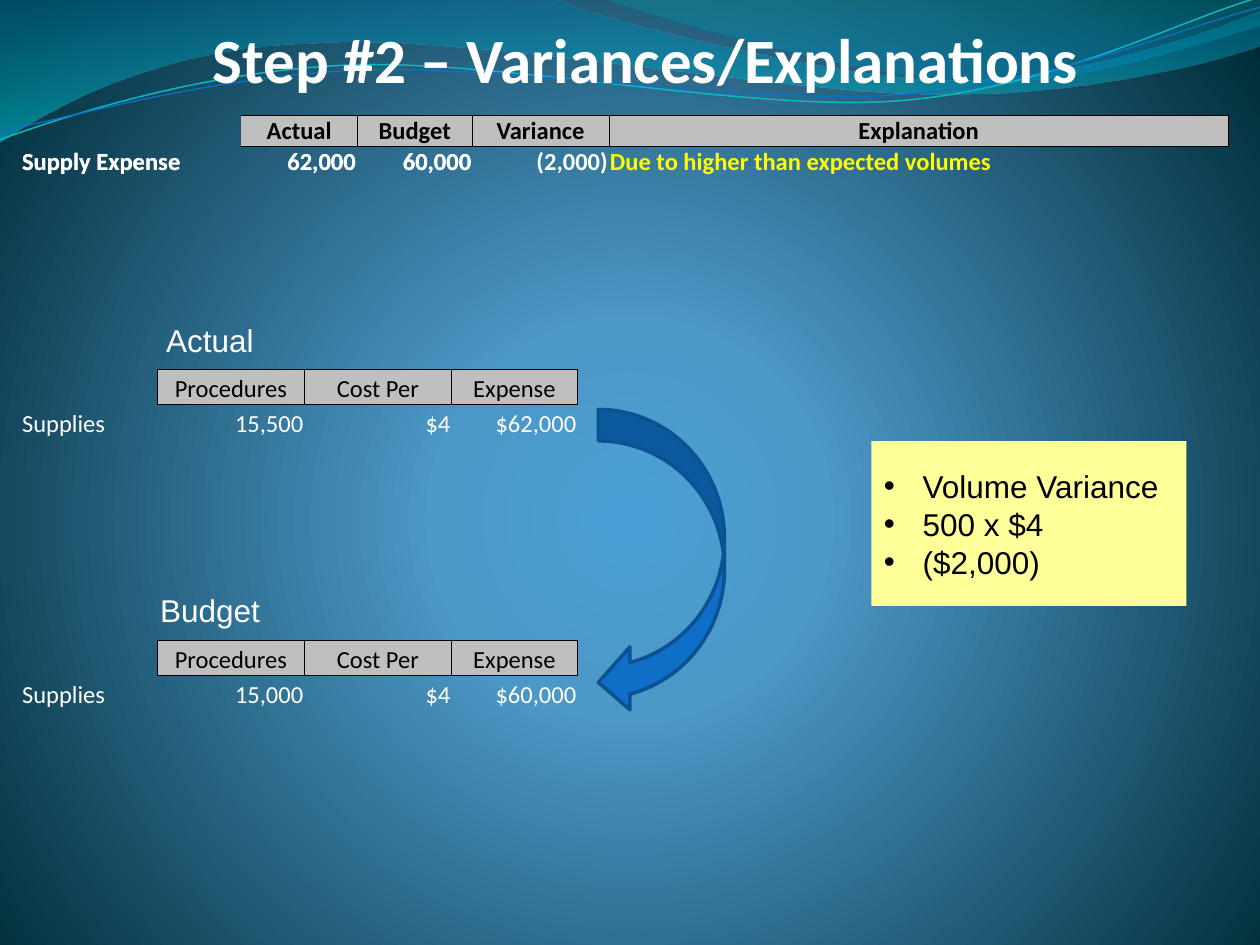
from lxml.etree import SubElement
from pptx import Presentation
from pptx.dml.color import RGBColor
from pptx.enum.shapes import MSO_SHAPE
from pptx.enum.text import MSO_ANCHOR, MSO_AUTO_SIZE, PP_ALIGN
from pptx.oxml import parse_xml
from pptx.oxml.ns import nsdecls, qn
from pptx.util import Pt

PX = 7620
COLORS = {
    "white": "FFFFFF", "black": "000000", "yellow": "FFFF00", "header": "BFBFBF",
    "note": "FFFF99", "arrow": "0F6FC6", "arrow_edge": "0B5292", "aqua": "0AB8BF",
    "glow": "4AA0D6", "mid": "4C98C7", "deep": "002C38",
    "wave_blue": "0074A1", "wave_aqua": "00C6CF", "wave_teal": "00A1A9", "wave_sky": "008BBF",
}


def rgb(name):
    """Return the named colour."""
    return RGBColor.from_string(COLORS[name])


def px(*lengths):
    """Turn px lengths into EMU."""
    return [length * PX for length in lengths]


def gradient(stops, direction):
    """Return a gradient fill from (position, colour, opacity) stops."""
    marks = "".join(
        f'<a:gs pos="{place * 1000}"><a:srgbClr val="{COLORS[name]}">'
        f'<a:alpha val="{opacity * 1000}"/></a:srgbClr></a:gs>'
        for place, name, opacity in stops)
    return parse_xml(f'<a:gradFill {nsdecls("a")} rotWithShape="1">'
                     f"<a:gsLst>{marks}</a:gsLst>{direction}</a:gradFill>")


def style_paragraph(para, size, color, font="Arial", bold=False, align=PP_ALIGN.LEFT):
    """Set the font and alignment of a paragraph."""
    para.alignment = align
    para.font.size, para.font.name, para.font.bold = Pt(size), font, bold
    para.font.color.rgb = rgb(color)


def add_background(page):
    """Give the page its radial gradient."""
    page.background.fill.solid()
    solid = page.background._cSld.find(".//" + qn("a:solidFill"))
    radial = ('<a:path path="circle"><a:fillToRect l="10000" t="110000" '
              'r="10000" b="100000"/></a:path>')
    stops = [(0, "glow", 100), (25, "mid", 100), (100, "deep", 100)]
    solid.getparent().replace(solid, gradient(stops, radial))


def bend(wave, segments):
    """Turn each three-point segment of a freeform into one Bezier curve."""
    lines = iter(wave._element.findall(".//" + qn("a:lnTo")))
    for segment in segments:
        first, *others = [next(lines) for _ in segment[::2]]
        if others:
            first.tag = qn("a:cubicBezTo")
        for other in others:
            first.append(other[0])
            other.getparent().remove(other)


def add_wave(page, start, segments, stops=None, line=None):
    """Draw a filled wave band or an open wave line."""
    points = [point for segment in segments for point in zip(segment[::2], segment[1::2])]
    builder = page.shapes.build_freeform(*start, scale=PX)
    builder.add_line_segments(points, close=stops is not None)
    wave = builder.convert_to_shape()
    bend(wave, segments)
    wave.shadow.inherit = False
    wave.fill.background()
    if stops:
        wave.line.fill.background()
        empty = wave._element.spPr.find(qn("a:noFill"))
        empty.getparent().replace(empty, gradient(stops, '<a:lin ang="5400000" scaled="0"/>'))
    else:
        wave.line.color.rgb, wave.line.width = rgb(line[0]), Pt(line[1])


def add_waves(page):
    """Draw the bands and lines along the top of the page."""
    add_wave(page, (0, 0), [
        (528, -1), (571, 20, 797, 76, 910, 76), (1024, 76, 1150, 31, 1200, 11), (1201, 43),
        (1180, 53, 1044, 91, 895, 90), (746, 90, 458, 34, 308, 41), (155, 43, 55, 100, -1, 136),
    ], stops=[(0, "wave_blue", 45), (100, "wave_aqua", 55)])
    add_wave(page, (575, -1), [
        (611, 13, 818, 74, 923, 78), (1027, 83, 1153, 38, 1200, 25), (1200, 0),
    ], stops=[(0, "wave_teal", 30), (80, "wave_sky", 45)])
    add_wave(page, (0, 133), [
        (58, 112, 190, 68, 332, 62), (474, 56, 712, 107, 856, 96), (1000, 85, 1126, 18, 1198, -2),
    ], line=("aqua", 0.85))
    add_wave(page, (0, 125), [
        (56, 115, 197, 73, 340, 67), (484, 61, 716, 101, 860, 90), (1003, 80, 1129, 25, 1200, 7),
    ], line=("arrow", 0.75))


def add_title(page, box, text):
    """Place the title in front of the waves."""
    title = page.shapes.title
    title.left, title.top, title.width, title.height = px(*box)
    page.shapes._spTree.append(title._element)
    frame = title.text_frame
    frame.text = text
    frame.auto_size, frame.vertical_anchor = MSO_AUTO_SIZE.NONE, MSO_ANCHOR.BOTTOM
    frame.margin_left, frame.margin_top, frame.margin_right, frame.margin_bottom = px(0, 0, 2, 0)
    style_paragraph(frame.paragraphs[0], 36, "white", "Calibri", True, PP_ALIGN.CENTER)


def set_borders(cell, sides):
    """Draw black borders on the given sides and none on the others."""
    properties = cell._tc.get_or_add_tcPr()
    for side in "LRTB":
        edge = SubElement(properties, qn(f"a:ln{side}"), w=str(Pt(0.5)))
        if side in sides:
            SubElement(SubElement(edge, qn("a:solidFill")), qn("a:srgbClr"), val=COLORS["black"])
        else:
            SubElement(edge, qn("a:noFill"))


def add_figures(page, box, widths, rows, bold=False, left_edge=True, anchor=MSO_ANCHOR.BOTTOM):
    """Add a table with one header row, row labels and an optional explanation column."""
    table = page.shapes.add_table(len(rows), len(widths), *px(*box)).table
    table.first_row = table.horz_banding = False
    for column, width in zip(table.columns, widths):
        column.width = width * PX
    for r, texts in enumerate(rows):
        table.rows[r].height = box[3] * PX // len(rows)
        for c, text in enumerate(texts):
            cell = table.cell(r, c)
            header, explanation = r == 0 and c > 0, r > 0 and c == 4
            cell.text = text
            cell.margin_left, cell.margin_top, cell.margin_right, cell.margin_bottom = px(1, 1, 1, 0)
            cell.vertical_anchor = MSO_ANCHOR.BOTTOM if r == 0 else anchor
            sides = "LRTB" if header else "T" if c > 0 else "R" if r == 0 else ""
            if not left_edge and r == 0:
                sides = sides.replace("L" if c == 1 else "R" if c == 0 else " ", "")
            set_borders(cell, sides)
            if header:
                cell.fill.solid()
                cell.fill.fore_color.rgb = rgb("header")
            else:
                cell.fill.background()
            color = "black" if header else "yellow" if explanation else "white"
            align = (PP_ALIGN.CENTER if header else
                     PP_ALIGN.LEFT if c == 0 or explanation else PP_ALIGN.RIGHT)
            para = cell.text_frame.paragraphs[0]
            style_paragraph(para, 14, color, "Calibri", bold, align)
            if not text:
                SubElement(para._p, qn("a:endParaRPr"), sz="1400")


def add_text(page, box, lines, color, align=PP_ALIGN.LEFT, bulleted=False):
    """Add a text box with one paragraph for each line."""
    frame = page.shapes.add_textbox(*px(*box)).text_frame
    frame.word_wrap, frame.auto_size = True, MSO_AUTO_SIZE.SHAPE_TO_FIT_TEXT
    frame.text = "\n".join(lines)
    for para in frame.paragraphs:
        style_paragraph(para, 18, color, align=align)
        if bulleted:
            properties = para._p.get_or_add_pPr()
            properties.set("marL", str(37 * PX))
            properties.set("indent", str(-37 * PX))
            properties.insert(0, parse_xml(f'<a:buFont {nsdecls("a")} typeface="Arial"/>'))
            properties.insert(1, parse_xml(f'<a:buChar {nsdecls("a")} char="•"/>'))


def add_scenario_table(page, box, figures):
    """Add the supply table of one scenario."""
    add_figures(page, box, [130, 140, 140, 120],
                [["", "Procedures", "Cost Per", "Expense"], ["Supplies", *figures]])


def add_block(page, kind, box, fill, line=None):
    """Add a flat preset shape."""
    block = page.shapes.add_shape(kind, *px(*box))
    block.shadow.inherit = False
    block.fill.solid()
    block.fill.fore_color.rgb = rgb(fill)
    if line:
        block.line.color.rgb, block.line.width = rgb(line), Pt(2)
    else:
        block.line.fill.background()


def add_note(page, box, lines):
    """Add the note panel with its bullets."""
    left, top, width, height = box
    add_block(page, MSO_SHAPE.RECTANGLE, box, "note")
    add_text(page, (left, top + 19, width - 10, height - 36), lines, "black", bulleted=True)


def main():
    """Build the variance slide."""
    deck = Presentation()
    deck.slide_width, deck.slide_height = px(1200, 900)
    page = deck.slides.add_slide(deck.slide_layouts[5])
    add_background(page)
    add_waves(page)
    add_title(page, (-137, -30, 1506, 122), "Step #2 – Variances/Explanations")
    for answer in (["", ""], ["(2,000)", "Due to higher than expected volumes"]):
        add_figures(page, (20, 110, 1150, 58), [210, 110, 110, 130, 590],
                    [["", "Actual", "Budget", "Variance", "Explanation"],
                     ["Supply Expense", "62,000", "60,000", *answer]],
                    bold=True, left_edge=False, anchor=MSO_ANCHOR.TOP)
    add_scenario_table(page, (20, 352, 530, 66), ["15,500", "$4", "$62,000"])
    add_scenario_table(page, (20, 610, 530, 66), ["15,000", "$4", "$60,000"])
    for name, top in (("Actual", 300), ("Budget", 557)):
        add_text(page, (120, top, 160, 48), [name], "white", PP_ALIGN.CENTER)
    add_note(page, (830, 420, 300, 157), ["Volume Variance", "500 x $4", "($2,000)"])
    add_block(page, MSO_SHAPE.CURVED_LEFT_ARROW, (570, 390, 120, 290), "arrow", "arrow_edge")
    deck.save("out.pptx")


if __name__ == "__main__":
    main()
